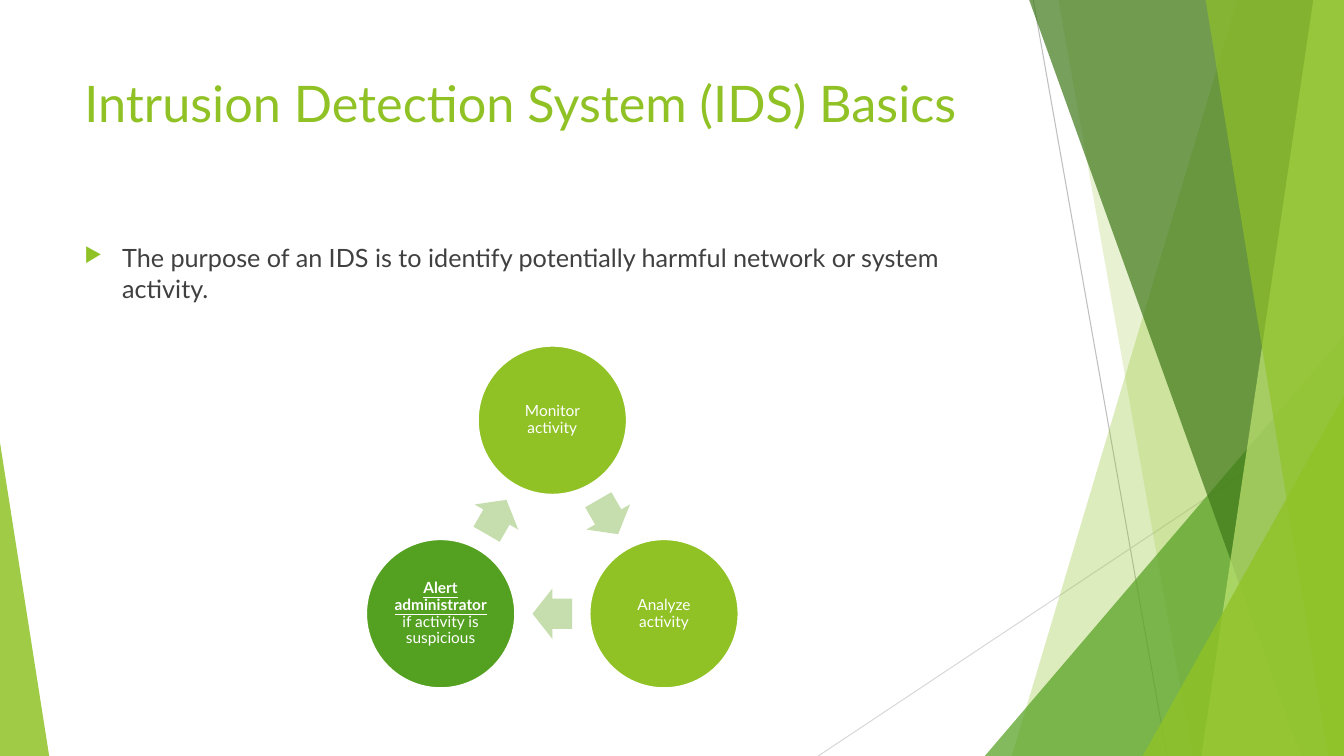
from dataclasses import dataclass
from math import cos, radians, sin

from lxml.etree import SubElement
from pptx import Presentation
from pptx.dml.color import RGBColor
from pptx.enum.shapes import MSO_CONNECTOR, MSO_SHAPE
from pptx.enum.text import MSO_ANCHOR, PP_ALIGN
from pptx.oxml.ns import qn
from pptx.shapes.autoshape import Shape
from pptx.slide import Slide
from pptx.text.text import _Paragraph as Paragraph
from pptx.util import Cm, Pt


@dataclass(frozen=True)
class Theme:
    font: str = "Lato"
    lime: str = "90C226"
    green: str = "54A021"
    forest: str = "3F7819"
    pale_lime: str = "C0E474"
    arrow: str = "C6DDAD"
    ink: str = "404040"
    white: str = "FFFFFF"
    dark_rule: str = "BFBFBF"
    light_rule: str = "D9D9D9"
    title_size: float = 36
    body_size: float = 18
    step_size: float = 11


@dataclass(frozen=True)
class Rule:
    start: tuple[float, float]
    end: tuple[float, float]
    color: str


@dataclass(frozen=True)
class Facet:
    top_x: float
    bottom_x: float
    color: str
    opacity: int


@dataclass(frozen=True)
class Corner:
    left: float
    top: float
    width: float
    apex: float
    color: str
    opacity: int


@dataclass(frozen=True)
class Step:
    color: str
    text: str
    emphasis: str = ""


THEME = Theme()
WIDTH, HEIGHT = 33.87, 19.05
FACET_TOP = -0.02
CYCLE_X, CYCLE_Y, CYCLE_RADIUS = 13.92, 13.84, 3.25
CIRCLE_SIZE = 3.76
ARROW_LENGTH, ARROW_BREADTH = 1.0, 1.27

RULES = [
    Rule((26.04, 0), (29.41, HEIGHT), THEME.dark_rule),
    Rule((WIDTH, 10.24), (20.62, HEIGHT), THEME.light_rule),
]
DECORATION = [
    Facet(31.19, 25.5, THEME.lime, 30),
    Facet(26.67, 30.05, THEME.lime, 20),
    Corner(24.82, 8.46, 9.05, 1, THEME.green, 72),
    Facet(25.93, 32.79, THEME.forest, 70),
    Facet(33.1, 30.28, THEME.pale_lime, 70),
    Facet(30.38, 33.48, THEME.lime, 65),
    Corner(28.8, 9.98, 5.07, 1, THEME.lime, 80),
    Corner(0, 11.15, 1.24, 0, THEME.lime, 85),
]
STEPS = [
    Step(THEME.lime, "Monitor activity"),
    Step(THEME.lime, "Analyze activity"),
    Step(THEME.green, "if activity is suspicious", "Alert administrator "),
]


def paint(shape: Shape, color: str, opacity: int = 100) -> None:
    shape.shadow.inherit = False
    shape.fill.solid()
    shape.fill.fore_color.rgb = RGBColor.from_string(color)
    shape.line.fill.background()
    if opacity < 100:
        for tint in shape.element.spPr.iter(qn("a:srgbClr")):
            SubElement(tint, qn("a:alpha"), val=str(opacity * 1000))


def set_font(para: Paragraph, size: float, color: str) -> None:
    para.font.name = THEME.font
    para.font.size = Pt(size)
    para.font.color.rgb = RGBColor.from_string(color)


def draw_rule(page: Slide, rule: Rule) -> None:
    line = page.shapes.add_connector(
        MSO_CONNECTOR.STRAIGHT, *map(Cm, rule.start), *map(Cm, rule.end)
    )
    line.line.color.rgb = RGBColor.from_string(rule.color)
    line.line.width = Pt(0.75)
    SubElement(line.element.spPr, qn("a:effectLst"))


def draw_facet(page: Slide, facet: Facet) -> None:
    outline = page.shapes.build_freeform(Cm(facet.top_x), Cm(FACET_TOP))
    outline.add_line_segments(
        [
            (Cm(WIDTH), Cm(FACET_TOP)),
            (Cm(WIDTH), Cm(HEIGHT)),
            (Cm(facet.bottom_x), Cm(HEIGHT)),
        ]
    )
    paint(outline.convert_to_shape(), facet.color, facet.opacity)


def draw_corner(page: Slide, corner: Corner) -> None:
    triangle = page.shapes.add_shape(
        MSO_SHAPE.ISOSCELES_TRIANGLE,
        Cm(corner.left),
        Cm(corner.top),
        Cm(corner.width),
        Cm(HEIGHT - corner.top),
    )
    triangle.adjustments[0] = corner.apex
    paint(triangle, corner.color, corner.opacity)


def add_text(page: Slide, top: float, height: float, text: str) -> Paragraph:
    box = page.shapes.add_textbox(Cm(1.88), Cm(top), Cm(23.88), Cm(height))
    box.text_frame.word_wrap = True
    para = box.text_frame.paragraphs[0]
    para.text = text
    return para


def add_bullet(para: Paragraph) -> None:
    para.space_before = Pt(10)
    properties = para._p.get_or_add_pPr()
    properties.set("marL", str(Cm(0.95)))
    properties.set("indent", str(-Cm(0.95)))
    color = SubElement(properties, qn("a:buClr"))
    SubElement(color, qn("a:srgbClr"), val=THEME.lime)
    SubElement(properties, qn("a:buSzPct"), val="80000")
    SubElement(properties, qn("a:buChar"), char="▶")


def add_cycle_shape(
    page: Slide, kind: MSO_SHAPE, angle: float, radius: float, width: float, height: float
) -> Shape:
    center_x = CYCLE_X + radius * cos(radians(angle))
    center_y = CYCLE_Y + radius * sin(radians(angle))
    return page.shapes.add_shape(
        kind, Cm(center_x - width / 2), Cm(center_y - height / 2), Cm(width), Cm(height)
    )


def draw_step(page: Slide, step: Step, angle: float) -> None:
    circle = add_cycle_shape(
        page, MSO_SHAPE.OVAL, angle, CYCLE_RADIUS, CIRCLE_SIZE, CIRCLE_SIZE
    )
    paint(circle, step.color)
    circle.line.color.rgb = RGBColor.from_string(THEME.white)
    circle.line.width = Pt(1.5)
    frame = circle.text_frame
    frame.word_wrap = True
    frame.vertical_anchor = MSO_ANCHOR.MIDDLE
    frame.margin_left = frame.margin_right = Cm(0.05)
    frame.margin_top = frame.margin_bottom = Cm(0.05)
    para = frame.paragraphs[0]
    para.alignment = PP_ALIGN.CENTER
    para.line_spacing = 0.9
    set_font(para, THEME.step_size, THEME.white)
    if step.emphasis:
        span = para.add_run()
        span.text = step.emphasis
        span.font.bold = span.font.underline = True
    para.add_run().text = step.text


def draw_arrow(page: Slide, angle: float) -> None:
    arrow = add_cycle_shape(
        page, MSO_SHAPE.RIGHT_ARROW, angle, CYCLE_RADIUS / 2, ARROW_LENGTH, ARROW_BREADTH
    )
    arrow.adjustments[0] = 0.6
    arrow.adjustments[1] = 0.5
    arrow.rotation = angle + 90
    paint(arrow, THEME.arrow)


def main() -> None:
    deck = Presentation()
    deck.slide_width, deck.slide_height = Cm(WIDTH), Cm(HEIGHT)
    page = deck.slides.add_slide(deck.slide_layouts[6])
    for rule in RULES:
        draw_rule(page, rule)
    for piece in DECORATION:
        if isinstance(piece, Facet):
            draw_facet(page, piece)
        else:
            draw_corner(page, piece)
    title = add_text(page, 1.7, 3.66, "Intrusion Detection System (IDS) Basics")
    set_font(title, THEME.title_size, THEME.lime)
    purpose = add_text(
        page, 5.99, 2.26,
        "The purpose of an IDS is to identify potentially harmful network or system activity.",
    )
    add_bullet(purpose)
    set_font(purpose, THEME.body_size, THEME.ink)
    sector = 360 / len(STEPS)
    for index, step in enumerate(STEPS):
        angle = index * sector - 90
        draw_step(page, step, angle)
        draw_arrow(page, angle + sector / 2)
    deck.save("out.pptx")


if __name__ == "__main__":
    main()
